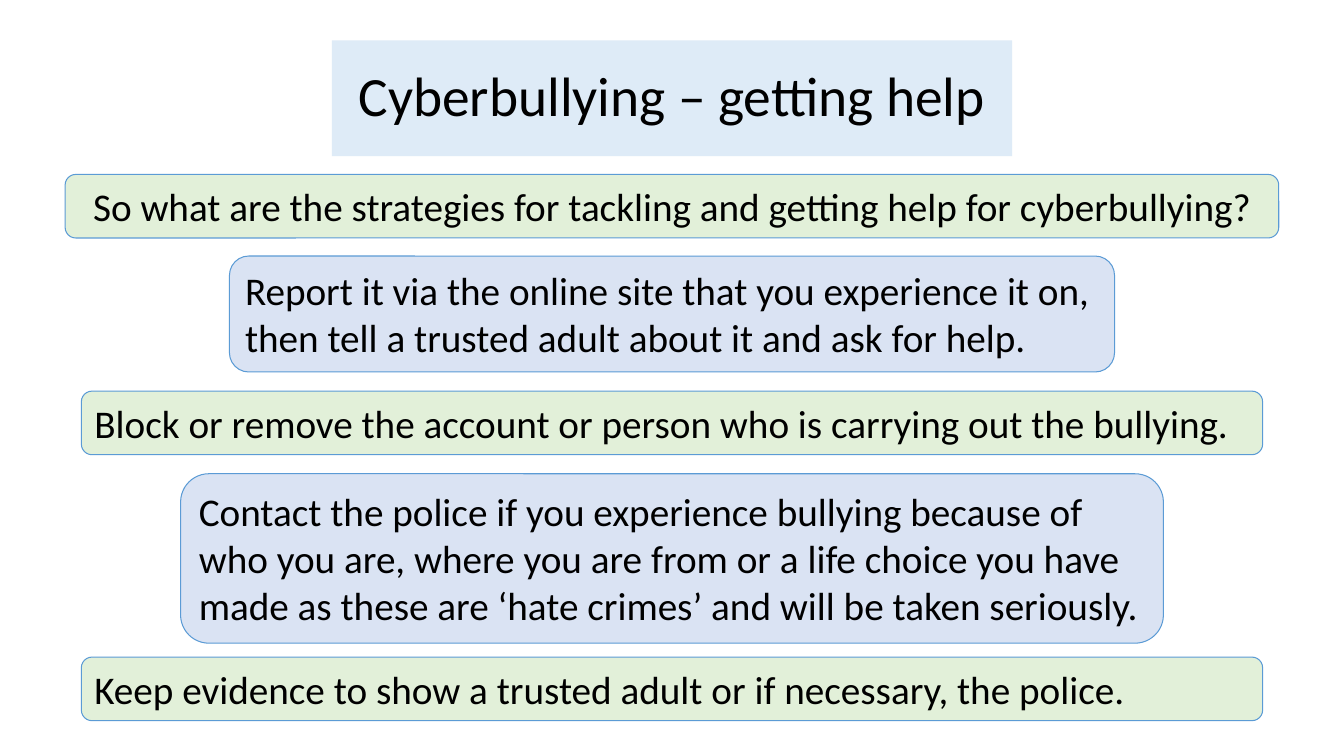
from pptx import Presentation
from pptx.dml.color import RGBColor
from pptx.enum.shapes import MSO_SHAPE as Shape
from pptx.enum.text import MSO_ANCHOR as Anchor, PP_ALIGN as Align
from pptx.util import Pt

SLIDE_WIDTH, SLIDE_HEIGHT = 960, 540
TITLE_FILL, GREEN, BLUE, OUTLINE, BLACK = "DEEBF7", "E2F0D9", "DAE3F3", "5B9BD5", "000000"


def color(value):
    return RGBColor.from_string(value)


def set_formats(target, formats):
    for name, value in formats.items():
        setattr(target, name, value)


class HelpSlide:
    font_name = "Calibri"
    body_size = 28
    title_size = 39.6

    def __init__(self, deck):
        self.page = deck.slides.add_slide(deck.slide_layouts[6])

    def centered_box(self, kind, top, width, height, fill):
        left = (SLIDE_WIDTH - width) / 2
        box = self.page.shapes.add_shape(kind, Pt(left), Pt(top), Pt(width), Pt(height))
        box.shadow.inherit = False
        box.fill.solid()
        box.fill.fore_color.rgb = color(fill)
        return box

    def add_text(self, box, text, size, anchor, formats):
        set_formats(box.text_frame, {"word_wrap": True, "vertical_anchor": anchor})
        para = box.text_frame.paragraphs[0]
        set_formats(para, formats)
        span = para.add_run()
        span.text = text
        set_formats(span.font, {"name": self.font_name, "size": Pt(size)})
        span.font.color.rgb = color(BLACK)

    def title(self, text, top, width, height):
        box = self.centered_box(Shape.RECTANGLE, top, width, height, TITLE_FILL)
        box.line.fill.background()
        formats = {"alignment": Align.CENTER, "line_spacing": 0.9}
        self.add_text(box, text, self.title_size, Anchor.MIDDLE, formats)

    def advice(self, text, top, width, height, fill, alignment=Align.LEFT):
        box = self.centered_box(Shape.ROUNDED_RECTANGLE, top, width, height, fill)
        box.line.color.rgb = color(OUTLINE)
        box.line.width = Pt(0.75)
        self.add_text(box, text, self.body_size, Anchor.TOP, {"alignment": alignment})


def main():
    deck = Presentation()
    set_formats(deck, {"slide_width": Pt(SLIDE_WIDTH), "slide_height": Pt(SLIDE_HEIGHT)})
    slide = HelpSlide(deck)
    slide.title("Cyberbullying – getting help", 28.8, 486, 82.8)
    slide.advice(
        "So what are the strategies for tackling and getting help for cyberbullying?",
        124.6, 866.9, 45.4, GREEN, Align.CENTER)
    strategies = [
        ("Report it via the online site that you experience it on, "
         "then tell a trusted adult about it and ask for help.", 182.9, 632.2, 82.8, BLUE),
        ("Block or remove the account or person who is carrying out the bullying.",
         279.4, 843.8, 45.4, GREEN),
        ("Contact the police if you experience bullying because of who you are, "
         "where you are from or a life choice you have made as these are "
         "‘hate crimes’ and will be taken seriously.", 338.4, 702, 121, BLUE),
        ("Keep evidence to show a trusted adult or if necessary, the police.",
         469.4, 843.8, 45.4, GREEN),
    ]
    for strategy in strategies:
        slide.advice(*strategy)
    deck.save("out.pptx")


if __name__ == "__main__":
    main()
